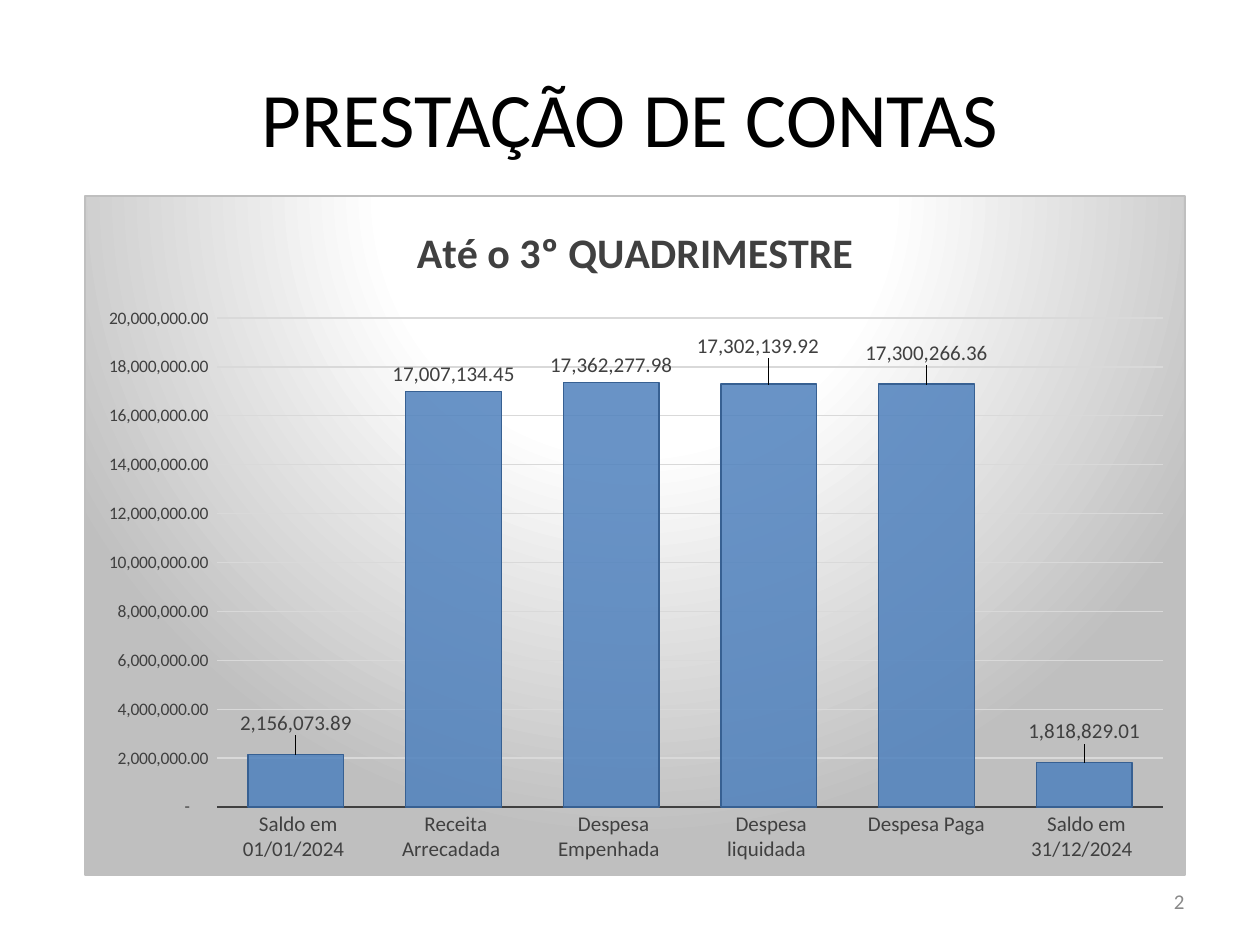
from lxml.etree import SubElement
from pptx import Presentation
from pptx.chart.data import CategoryChartData
from pptx.dml.color import RGBColor
from pptx.enum.chart import XL_CHART_TYPE, XL_LABEL_POSITION, XL_TICK_MARK
from pptx.enum.text import MSO_ANCHOR, PP_ALIGN
from pptx.oxml import parse_xml
from pptx.oxml.ns import nsdecls, qn
from pptx.util import Inches, Pt

HEADING = "PRESTAÇÃO DE CONTAS"
CHART_HEADING = "Até o 3º QUADRIMESTRE"
PAGE_NUMBER = "2"
BALANCES = [
    (" Saldo em 01/01/2024 ", 2156073.89),
    (" Receita Arrecadada ", 17007134.45),
    (" Despesa Empenhada ", 17362277.98),
    (" Despesa liquidada ", 17302139.92),
    (" Despesa Paga ", 17300266.36),
    (" Saldo em 31/12/2024 ", 1818829.01),
]
LABEL_SHIFTS = {0: (0, -0.02), 3: (-0.01, -0.03), 4: (0, -0.02), 5: (0, -0.02)}
PLOT_FRAME = {"x": 0.12, "y": 0.18, "w": 0.86, "h": 0.72}
MONEY = '_(* #,##0.00_);_(* \\(#,##0.00\\);_(* "-"??_);_(@_)'
FONT = "Calibri"
BLACK = RGBColor(0x00, 0x00, 0x00)
DARK = RGBColor(0x40, 0x40, 0x40)
MUTED = RGBColor(0x89, 0x89, 0x89)
GRID = RGBColor(0xD9, 0xD9, 0xD9)
BAR = RGBColor(0x4F, 0x81, 0xBD)
BAR_EDGE = RGBColor(0x37, 0x60, 0x92)
BACKDROP = f"""<c:spPr {nsdecls('c', 'a')}>
  <a:gradFill rotWithShape="1">
    <a:gsLst>
      <a:gs pos="0"><a:srgbClr val="FFFFFF"/></a:gs>
      <a:gs pos="39000"><a:srgbClr val="FFFFFF"/></a:gs>
      <a:gs pos="100000"><a:srgbClr val="BFBFBF"/></a:gs>
    </a:gsLst>
    <a:path path="circle"><a:fillToRect l="50000" t="-80000" r="50000" b="180000"/></a:path>
  </a:gradFill>
  <a:ln w="9525"><a:solidFill><a:srgbClr val="BFBFBF"/></a:solidFill></a:ln>
</c:spPr>"""


def style(font, size, color, bold=False):
    font.name, font.size, font.bold = FONT, Pt(size), bold
    font.color.rgb = color


def write(frame, text, size, color, align):
    frame.word_wrap = True
    frame.vertical_anchor = MSO_ANCHOR.MIDDLE
    paragraph = frame.paragraphs[0]
    paragraph.alignment = align
    run = paragraph.add_run()
    run.text = text
    style(run.font, size, color)


def manual_layout(settings):
    layout = parse_xml(f"<c:layout {nsdecls('c')}><c:manualLayout/></c:layout>")
    for tag, value in settings.items():
        SubElement(layout[0], qn(f"c:{tag}")).set("val", str(value))
    return layout


def add_balance_chart(slide):
    data = CategoryChartData(number_format=MONEY)
    data.categories = [name for name, _ in BALANCES]
    data.add_series("Series 1", [value for _, value in BALANCES])
    chart = slide.shapes.add_chart(
        XL_CHART_TYPE.COLUMN_CLUSTERED,
        Inches(0.67), Inches(1.55), Inches(8.74), Inches(5.4), data,
    ).chart
    chart.has_legend = False
    style(chart.font, 10, BLACK)
    heading = chart.chart_title.text_frame.paragraphs[0].add_run()
    heading.text = CHART_HEADING
    style(heading.font, 24, DARK, bold=True)

    for axis, size in ((chart.category_axis, 12), (chart.value_axis, 10)):
        axis.major_tick_mark = axis.minor_tick_mark = XL_TICK_MARK.NONE
        style(axis.tick_labels.font, size, DARK)
    chart.category_axis.format.line.color.rgb = DARK
    chart.category_axis.format.line.width = Pt(1.5)
    amounts = chart.value_axis
    amounts.minimum_scale, amounts.maximum_scale = 0, 20_000_000
    amounts.major_unit = 2_000_000
    amounts.format.line.fill.background()
    amounts.major_gridlines.format.line.color.rgb = GRID
    amounts.major_gridlines.format.line.width = Pt(0.75)
    amounts.tick_labels.number_format = MONEY
    amounts.tick_labels.number_format_is_linked = False

    plot = chart.plots[0]
    plot.gap_width = 65
    plot.vary_by_categories = False
    bars = plot.series[0]
    bars.format.fill.solid()
    bars.format.fill.fore_color.rgb = BAR
    bar_color = bars.format.fill._xPr.find(qn("a:solidFill"))[0]
    SubElement(bar_color, qn("a:alpha")).set("val", "85000")
    bars.format.line.color.rgb = BAR_EDGE
    bars.format.line.width = Pt(0.75)

    labels = bars.data_labels
    labels.show_value = True
    labels.position = XL_LABEL_POSITION.OUTSIDE_END
    labels.number_format = MONEY
    labels.number_format_is_linked = False
    style(labels.font, 12, DARK)
    for index, (dx, dy) in LABEL_SHIFTS.items():
        label = bars.points[index].data_label
        label.position = XL_LABEL_POSITION.OUTSIDE_END
        style(label.font, 12, DARK)
    for label in labels._element.findall(qn("c:dLbl")):
        index = label.find(qn("c:idx"))
        dx, dy = LABEL_SHIFTS[int(index.get("val"))]
        index.addnext(manual_layout({"x": dx, "y": dy}))

    chart_space = chart._chartSpace
    plot_area = chart_space.chart.plotArea
    for automatic in plot_area.findall(qn("c:layout")):
        plot_area.remove(automatic)
    plot_area.insert(0, manual_layout(
        {"layoutTarget": "inner", "xMode": "edge", "yMode": "edge", **PLOT_FRAME}))
    chart_space.chart.addnext(parse_xml(BACKDROP))


def main():
    deck = Presentation()
    deck.slide_width, deck.slide_height = Inches(10), Inches(7.5)
    slide = deck.slides.add_slide(deck.slide_layouts[5])
    title = slide.shapes.title
    title.left, title.top = Inches(0.5), Inches(0.3)
    title.width, title.height = Inches(9), Inches(1.25)
    write(title.text_frame, HEADING, 44, BLACK, PP_ALIGN.CENTER)
    add_balance_chart(slide)
    page = slide.shapes.add_textbox(Inches(7.17), Inches(6.95), Inches(2.33), Inches(0.4))
    write(page.text_frame, PAGE_NUMBER, 12, MUTED, PP_ALIGN.RIGHT)
    deck.save("out.pptx")


if __name__ == "__main__":
    main()
